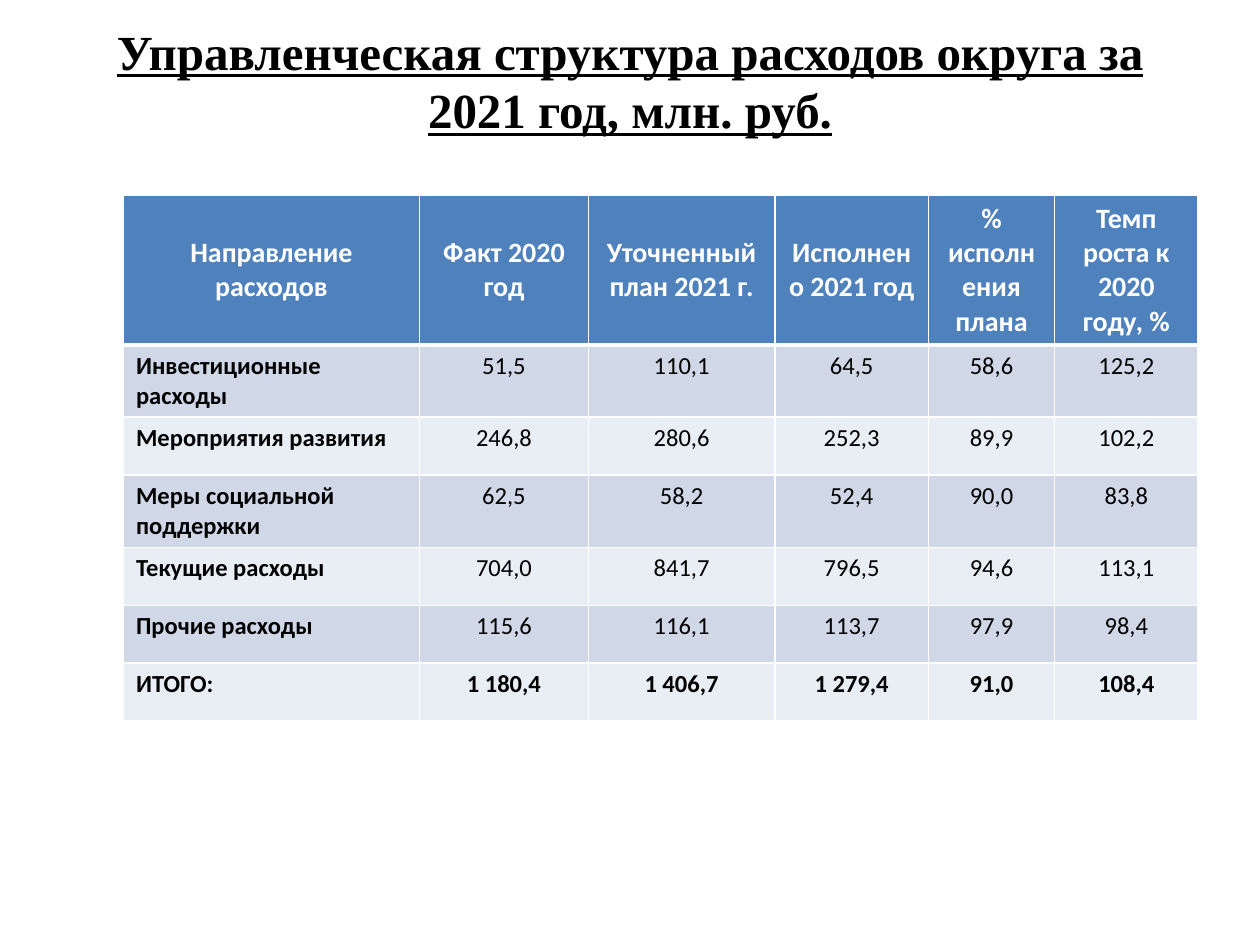
import pptx
import pptx.util
import pptx.dml.color
import pptx.enum.text
import pptx.oxml
import pptx.oxml.ns

Inches, Pt = pptx.util.Inches, pptx.util.Pt
ALIGN, ANCHOR = pptx.enum.text.PP_ALIGN, pptx.enum.text.MSO_ANCHOR

TITLE = "Управленческая структура расходов округа за 2021 год, млн. руб."
HEADER = ["Направление расходов", "Факт 2020 год", "Уточненный план 2021 г.",
          "Исполнено 2021 год", "% исполнения плана", "Темп роста к 2020 году, %"]
BODY = [
    ["Инвестиционные расходы", "51,5", "110,1", "64,5", "58,6", "125,2"],
    ["Мероприятия развития", "246,8", "280,6", "252,3", "89,9", "102,2"],
    ["Меры социальной поддержки", "62,5", "58,2", "52,4", "90,0", "83,8"],
    ["Текущие расходы", "704,0", "841,7", "796,5", "94,6", "113,1"],
    ["Прочие расходы", "115,6", "116,1", "113,7", "97,9", "98,4"],
    ["ИТОГО:", "1 180,4", "1 406,7", "1 279,4", "91,0", "108,4"],
]
ROWS = [HEADER] + BODY
COL_WIDTHS = [2.35, 1.34, 1.48, 1.22, 1, 1.14]
ROW_HEIGHTS = [1.18] + [0.46] * len(BODY)
COLORS = {"header": "4F81BD", "odd": "D0D8E8", "even": "E9EDF4",
          "white": "FFFFFF", "black": "000000"}


def rgb(name):
    return pptx.dml.color.RGBColor.from_string(COLORS[name])


def add_run(p, text, font, size, color, bold):
    r = p.add_run()
    r.text = text
    r.font.name, r.font.size, r.font.bold = font, Pt(size), bold
    r.font.color.rgb = rgb(color)
    return r


def set_borders(cell, widths):
    """Draw white borders; widths maps a side (L, R, T, B) to points."""
    tc_pr = cell._tc.get_or_add_tcPr()
    for i, (side, width) in enumerate(widths.items()):
        tc_pr.insert(i, pptx.oxml.parse_xml(
            f'<a:ln{side} {pptx.oxml.ns.nsdecls("a")} w="{Pt(width)}"><a:solidFill>'
            f'<a:srgbClr val="{COLORS["white"]}"/></a:solidFill></a:ln{side}>'))


def fill_cell(cell, text, row, col):
    is_header, is_total = row == 0, row == len(ROWS) - 1
    cell.fill.solid()
    cell.fill.fore_color.rgb = rgb("header" if is_header else "odd" if row % 2 else "even")
    cell.vertical_anchor = ANCHOR.MIDDLE if is_header else ANCHOR.TOP
    p = cell.text_frame.paragraphs[0]
    p.alignment = ALIGN.CENTER if is_header or col else ALIGN.LEFT
    add_run(p, text, "Calibri", 16 if is_header else 14,
            "white" if is_header else "black", is_header or is_total or col == 0)
    set_borders(cell, {"L": 1, "R": 1, "T": 3 if row == 1 else 1, "B": 3 if is_header else 1})


def main():
    prs = pptx.Presentation()
    prs.slide_width, prs.slide_height = Inches(10), Inches(7.5)
    s = prs.slides.add_slide(prs.slide_layouts[5])

    title = s.shapes.title
    title.left, title.top, title.width, title.height = map(Inches, (0.5, 0.13, 9, 1.01))
    tf = title.text_frame
    tf.word_wrap = True
    tf.vertical_anchor = ANCHOR.MIDDLE
    p = tf.paragraphs[0]
    p.alignment = ALIGN.CENTER
    add_run(p, TITLE, "Times New Roman", 28, "black", True).font.underline = True

    table = s.shapes.add_table(len(ROWS), len(HEADER), Inches(0.98), Inches(1.55),
                               Inches(sum(COL_WIDTHS)), Inches(sum(ROW_HEIGHTS))).table
    for column, width in zip(table.columns, COL_WIDTHS):
        column.width = Inches(width)
    for row, height in zip(table.rows, ROW_HEIGHTS):
        row.height = Inches(height)
    for i, texts in enumerate(ROWS):
        for j, text in enumerate(texts):
            fill_cell(table.cell(i, j), text, i, j)

    prs.save("out.pptx")


if __name__ == "__main__":
    main()
